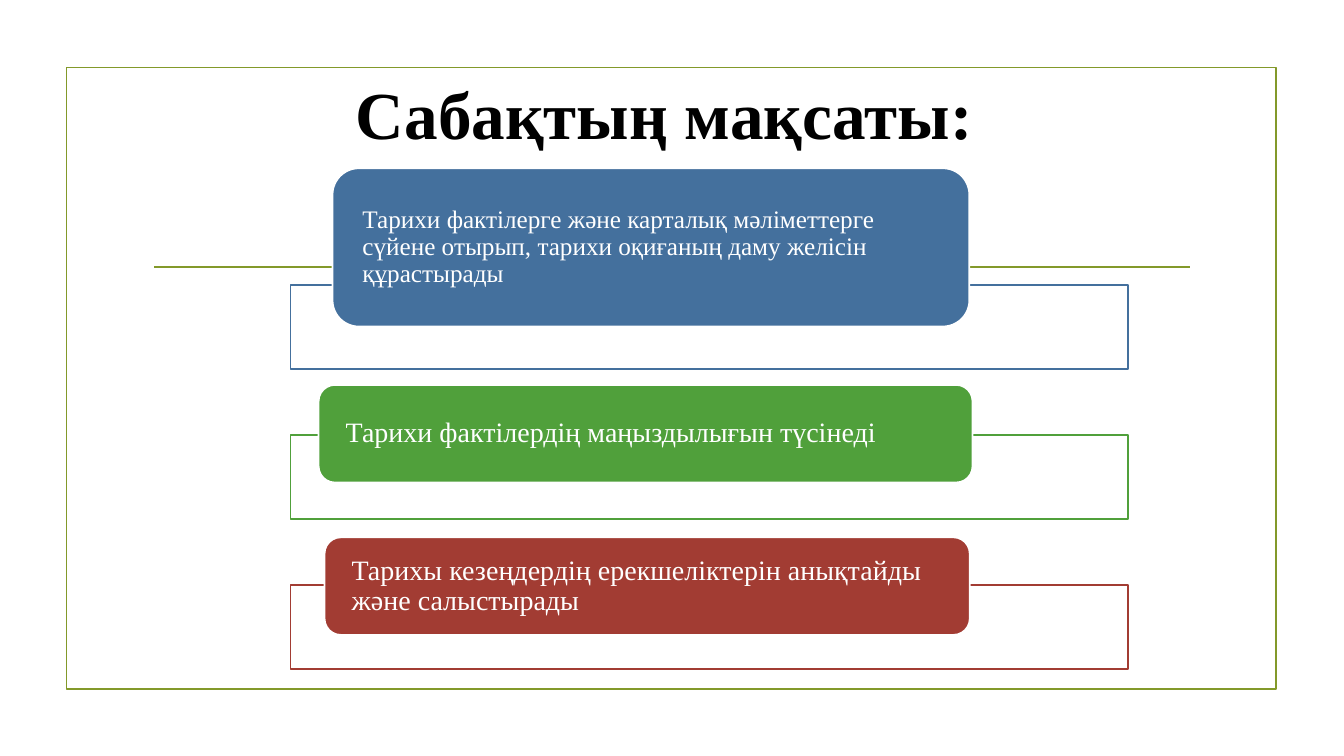
"""Build the lesson goals slide with three labelled bars."""
from lxml import etree
from pptx import Presentation
from pptx import util as u
from pptx.dml.color import RGBColor
from pptx.enum import shapes, text
from pptx.oxml.ns import qn

TITLE = "Сабақтың мақсаты:"
FONT = "Times New Roman"
COLORS = {"olive": "83992A", "blue": "44709D", "green": "50A03B",
          "red": "A23C33", "white": "FFFFFF", "black": "000000"}
GOALS = [
    ("Тарихи фактілерге және карталық мәліметтерге сүйене отырып, тарихи оқиғаның даму желісін құрастырады",
     "blue", 18, (8.38, 4.24, 16.05, 3.99)),
    ("Тарихи фактілердің маңыздылығын түсінеді",
     "green", 20, (8.03, 9.7, 16.48, 2.46)),
    ("Тарихы кезеңдердің ерекшеліктерін анықтайды және салыстырады",
     "red", 20, (8.18, 13.54, 16.26, 2.46)),
]
BAR_LEFT, BAR_TOP, BAR_WIDTH, BAR_HEIGHT, BAR_STEP = 7.32, 7.19, 21.11, 2.11, 3.78
LINE_WIDTH = u.Pt(1.25)


def color(name):
    return RGBColor.from_string(COLORS[name])


def add_box(page, kind, place, fill, line):
    box = page.shapes.add_shape(kind, *(u.Cm(length) for length in place))
    box.shadow.inherit = False
    if fill:
        box.fill.solid()
        box.fill.fore_color.rgb = color(fill)
    else:
        box.fill.background()
    box.line.color.rgb = color(line)
    box.line.width = LINE_WIDTH
    return box


def write(para, words, size, ink, bold=False):
    span = para.add_run()
    span.text = words
    span.font.name = FONT
    span.font.size = u.Pt(size)
    span.font.bold = bold
    span.font.color.rgb = color(ink)


def add_title(page):
    title = page.shapes.title
    title.left, title.top, title.width, title.height = (
        u.Cm(length) for length in (8.64, 1.68, 16.21, 2.31))
    frame = title.text_frame
    frame.word_wrap = False
    frame.vertical_anchor = text.MSO_ANCHOR.MIDDLE
    para = frame.paragraphs[0]
    para.alignment = text.PP_ALIGN.CENTER
    write(para, TITLE, 48, "black", True)


def add_rule(page):
    rule = page.shapes.add_connector(shapes.MSO_CONNECTOR.STRAIGHT,
                                     u.Cm(3.89), u.Cm(6.73), u.Cm(30), u.Cm(6.73))
    rule.line.color.rgb = color("olive")
    rule.line.width = LINE_WIDTH
    etree.SubElement(rule.element.spPr, qn("a:effectLst"))


def add_goal(page, index, words, hue, size, place):
    bar = (BAR_LEFT, BAR_TOP + index * BAR_STEP, BAR_WIDTH, BAR_HEIGHT)
    add_box(page, shapes.MSO_SHAPE.RECTANGLE, bar, "white", hue)
    label = add_box(page, shapes.MSO_SHAPE.ROUNDED_RECTANGLE, place, hue, "white")
    frame = label.text_frame
    frame.word_wrap = True
    frame.vertical_anchor = text.MSO_ANCHOR.MIDDLE
    frame.margin_left = frame.margin_right = u.Cm(0.56)
    frame.margin_top = frame.margin_bottom = 0
    para = frame.paragraphs[0]
    para.alignment = text.PP_ALIGN.LEFT
    para.line_spacing = 0.9
    write(para, words, size, "white")


def main():
    deck = Presentation()
    deck.slide_width, deck.slide_height = u.Cm(33.87), u.Cm(19.05)
    page = deck.slides.add_slide(deck.slide_layouts[5])
    add_box(page, shapes.MSO_SHAPE.RECTANGLE, (1.68, 1.7, 30.48, 15.67), None, "olive")
    add_rule(page)
    add_title(page)
    for index, goal in enumerate(GOALS):
        add_goal(page, index, *goal)
    deck.save("out.pptx")


if __name__ == "__main__":
    main()
